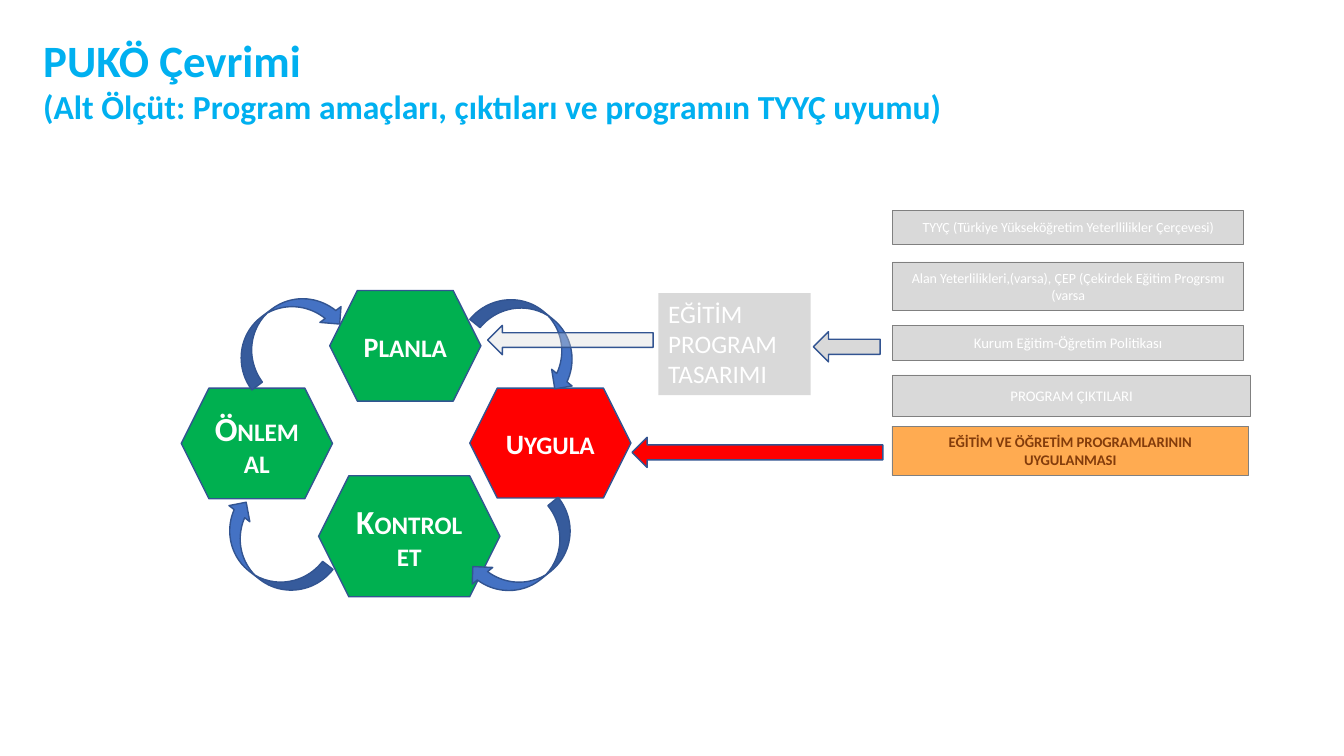
from lxml import etree
from pptx import Presentation
from pptx import util as u
from pptx.dml.color import RGBColor
from pptx.enum import shapes, text
from pptx.oxml.ns import qn

FONT = "Calibri"
WHITE, GREEN, RED, GRAY = "FFFFFF", "00B050", "FF0000", "D9D9D9"
BLUE, NAVY, SKY = "4472C4", "325491", "00B0F0"
ORANGE, BROWN, BORDER = "FFAB51", "833C0B", "808080"


def color(value):
    return RGBColor.from_string(value)


class CycleSlide:
    def __init__(self, presentation):
        self.slide = presentation.slides.add_slide(presentation.slide_layouts[6])

    def shape(self, kind, box, fill, line=None, width=1):
        shape = self.slide.shapes.add_shape(kind, *map(u.Cm, box))
        shape.shadow.inherit = False
        shape.fill.solid()
        shape.fill.fore_color.rgb = color(fill)
        if line:
            shape.line.color.rgb = color(line)
            shape.line.width = u.Pt(width)
        else:
            shape.line.fill.background()
        return shape

    def label(self, shape, paragraphs, ink, bold=False, centered=True):
        """Fill a shape with paragraphs, each a list of (words, size) runs."""
        frame = shape.text_frame
        frame.word_wrap = True
        frame.vertical_anchor = (
            text.MSO_ANCHOR.MIDDLE if centered else text.MSO_ANCHOR.TOP)
        for index, runs in enumerate(paragraphs):
            paragraph = frame.add_paragraph() if index else frame.paragraphs[0]
            paragraph.alignment = (
                text.PP_ALIGN.CENTER if centered else text.PP_ALIGN.LEFT)
            for words, size in runs:
                run = paragraph.add_run()
                run.text = words
                run.font.name = FONT
                run.font.size = u.Pt(size)
                run.font.bold = bold
                run.font.color.rgb = color(ink)

    def title(self, box, paragraphs):
        shape = self.slide.shapes.add_textbox(*map(u.Cm, box))
        self.label(shape, paragraphs, SKY, bold=True, centered=False)

    def step(self, box, fill, initial, rest, initial_size):
        shape = self.shape(shapes.MSO_SHAPE.HEXAGON, box, fill, NAVY)
        self.label(shape, [[(initial, initial_size), (rest, 18)]], WHITE, bold=True)

    def turn(self, left, top, angle):
        """Add a curved arrow that leads from one step to the next."""
        shape = self.shape(shapes.MSO_SHAPE.CURVED_DOWN_ARROW,
                           (left, top, 3.1, 1.33), BLUE, NAVY)
        shape.rotation = angle

    def source(self, box, words, size, fill=GRAY, ink=WHITE, bold=False):
        shape = self.shape(shapes.MSO_SHAPE.RECTANGLE, box, fill, BORDER, 0.5)
        self.label(shape, [[(words, size)]], ink, bold)

    def design(self, box, words):
        shape = self.shape(shapes.MSO_SHAPE.RECTANGLE, box, GRAY)
        self.label(shape, [[(words, 18)]], WHITE, centered=False)

    def left_arrow(self, box, fill, opacity=100):
        shape = self.shape(shapes.MSO_SHAPE.LEFT_ARROW, box, fill, NAVY)
        if opacity < 100:
            tint = shape.element.spPr.find(qn("a:solidFill"))[0]
            etree.SubElement(tint, qn("a:alpha")).set("val", str(opacity * 1000))


def main():
    presentation = Presentation()
    presentation.slide_width = u.Cm(33.87)
    presentation.slide_height = u.Cm(19.05)
    cycle = CycleSlide(presentation)

    for step in (
        ((8.31, 7.32, 3.81, 2.79), GREEN, "P", "LANLA", 20),
        ((11.84, 9.78, 4.06, 2.77), RED, "U", "YGULA", 20),
        ((8.03, 11.99, 4.57, 3.05), GREEN, "K", "ONTROL ET", 24),
        ((4.57, 9.78, 3.81, 2.79), GREEN, "Ö", "NLEM AL", 24),
    ):
        cycle.step(*step)

    for turn in ((11.91, 7.85, 39.3), (11.73, 13.36, 140.9),
                 (5.21, 13.26, 217.7), (5.64, 7.7, 323.1)):
        cycle.turn(*turn)

    for box, words, size in (
        ((22.5, 5.31, 8.84, 0.84),
         "TYYÇ (Türkiye Yükseköğretim Yeterllilikler Çerçevesi)", 10),
        ((22.5, 6.6, 8.84, 1.22),
         "Alan Yeterlilikleri,(varsa), ÇEP (Çekirdek Eğitim Progrsmı (varsa", 10),
        ((22.5, 8.2, 8.84, 0.89), "Kurum Eğitim-Öğretim Politikası", 10.5),
        ((22.5, 9.45, 9.02, 1.04), "PROGRAM ÇIKTILARI", 10.5),
    ):
        cycle.source(box, words, size)
    cycle.source((22.48, 10.74, 8.99, 1.24),
                 "EĞİTİM VE ÖĞRETİM PROGRAMLARININ UYGULANMASI",
                 10.5, ORANGE, BROWN, bold=True)

    cycle.design((16.59, 7.39, 3.84, 2.57), "EĞİTİM PROGRAM TASARIMI")
    cycle.left_arrow((20.5, 8.36, 1.68, 0.76), GRAY)
    cycle.left_arrow((12.29, 8.2, 4.17, 0.74), GRAY, opacity=36)
    cycle.left_arrow((15.93, 11.02, 6.32, 0.76), RED)

    cycle.title((0.84, 0.69, 29.54, 2.64), [
        [("PUKÖ Çevrimi", 32)],
        [("(Alt Ölçüt: Program amaçları, çıktıları ve programın TYYÇ uyumu)", 24)],
    ])
    presentation.save("out.pptx")


if __name__ == "__main__":
    main()
